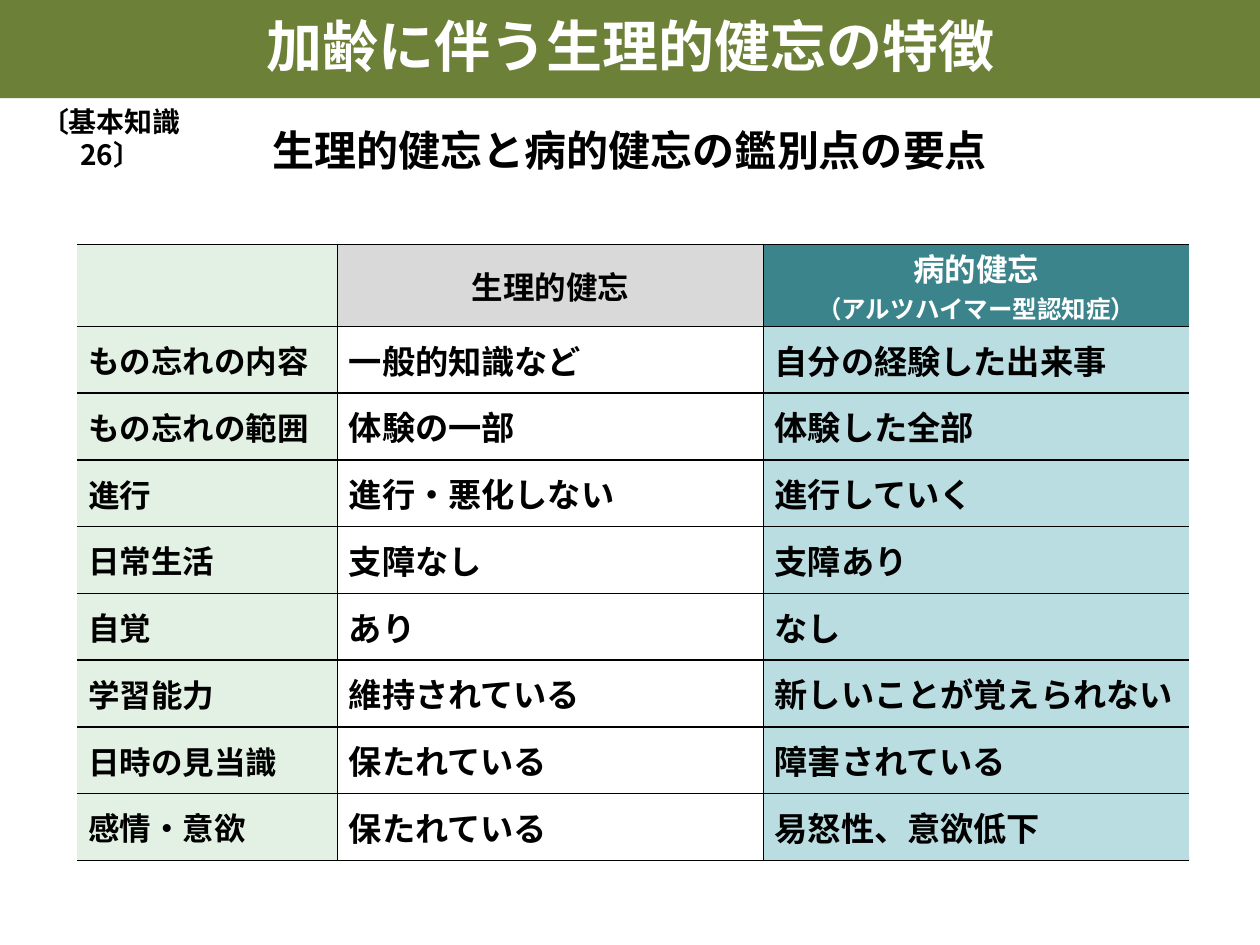
import pptx
import pptx.util
import pptx.dml.color
import pptx.enum.shapes
import pptx.enum.text
import pptx.oxml.ns
import lxml.etree

Inches = pptx.util.Inches
Pt = pptx.util.Pt
ALIGN = pptx.enum.text.PP_ALIGN
MIDDLE = pptx.enum.text.MSO_ANCHOR.MIDDLE
qn = pptx.oxml.ns.qn

FONT = "Noto Sans CJK JP"
COLORS = {
    "band": "6D8038",
    "white": "FFFFFF",
    "black": "000000",
    "label": "E3F1E4",
    "normal": "D9D9D9",
    "disease": "3C848C",
    "disease_body": "BADDE1",
}

ROWS = [
    ("もの忘れの内容", "一般的知識など", "自分の経験した出来事"),
    ("もの忘れの範囲", "体験の一部", "体験した全部"),
    ("進行", "進行・悪化しない", "進行していく"),
    ("日常生活", "支障なし", "支障あり"),
    ("自覚", "あり", "なし"),
    ("学習能力", "維持されている", "新しいことが覚えられない"),
    ("日時の見当識", "保たれている", "障害されている"),
    ("感情・意欲", "保たれている", "易怒性、意欲低下"),
]


def rgb(name):
    return pptx.dml.color.RGBColor.from_string(COLORS[name])


def add_text(p, text, size=18, color="black", align=ALIGN.LEFT):
    """Add one bold run to a paragraph."""
    p.alignment = align
    r = p.add_run()
    r.text = text
    r.font.size = Pt(size)
    r.font.bold = True
    r.font.name = FONT
    r.font.color.rgb = rgb(color)
    ea = lxml.etree.SubElement(r.font._element, qn("a:ea"))
    ea.set("typeface", FONT)


class SlideBuilder:
    def __init__(self, slide):
        self.s = slide

    def band(self, x, y, w, h, color):
        sp = self.s.shapes.add_shape(
            pptx.enum.shapes.MSO_SHAPE.RECTANGLE,
            Inches(x), Inches(y), Inches(w), Inches(h))
        sp.shadow.inherit = False
        sp.fill.solid()
        sp.fill.fore_color.rgb = rgb(color)
        sp.line.fill.background()

    def text(self, x, y, w, h, text, wrap=False, anchor=MIDDLE, **style):
        sp = self.s.shapes.add_textbox(Inches(x), Inches(y), Inches(w), Inches(h))
        tf = sp.text_frame
        tf.word_wrap = wrap
        tf.vertical_anchor = anchor
        add_text(tf.paragraphs[0], text, align=ALIGN.CENTER, **style)

    def table(self, x, y, widths, heights):
        frame = self.s.shapes.add_table(
            len(heights), len(widths), Inches(x), Inches(y),
            Inches(sum(widths)), Inches(sum(heights)))
        table = frame.table
        table.first_row = False
        table.horz_banding = False
        for col, width in zip(table.columns, widths):
            col.width = Inches(width)
        for row, height in zip(table.rows, heights):
            row.height = Inches(height)
        return table

    def cell(self, cell, lines, fill=None, sides="LRTB"):
        """Fill a cell; lines is a list of (text, format) pairs."""
        cell.vertical_anchor = MIDDLE
        cell.margin_left = cell.margin_right = Inches(0.09)
        # Two lines need the full height of the row
        cell.margin_top = cell.margin_bottom = Inches(0 if len(lines) > 1 else 0.05)
        tf = cell.text_frame
        for i, (text, style) in enumerate(lines):
            p = tf.add_paragraph() if i else tf.paragraphs[0]
            add_text(p, text, **style)
        self.borders(cell, sides)
        if fill:
            cell.fill.solid()
            cell.fill.fore_color.rgb = rgb(fill)
        else:
            cell.fill.background()

    def borders(self, cell, sides):
        tc_pr = cell._tc.get_or_add_tcPr()
        for side in "LRTB":
            ln = lxml.etree.SubElement(tc_pr, qn("a:ln" + side))
            if side in sides:
                ln.set("w", str(Pt(1)))
                solid = lxml.etree.SubElement(ln, qn("a:solidFill"))
                clr = lxml.etree.SubElement(solid, qn("a:srgbClr"))
                clr.set("val", COLORS["black"])
            else:
                lxml.etree.SubElement(ln, qn("a:noFill"))


def main():
    prs = pptx.Presentation()
    prs.slide_width, prs.slide_height = Inches(10), Inches(7.5)
    b = SlideBuilder(prs.slides.add_slide(prs.slide_layouts[6]))

    # Title band and headings
    b.band(0, 0, 10, 0.78, "band")
    b.text(0.23, 0.07, 9.56, 0.57, "加齢に伴う生理的健忘の特徴", size=32, color="white")
    b.text(0.22, 0.9, 9.56, 0.57, "生理的健忘と病的健忘の鑑別点の要点", size=24)
    b.text(0, 0.78, 1.76, 0.37, "〔基本知識 26〕", wrap=True,
           anchor=pptx.enum.text.MSO_ANCHOR.TOP, size=16)

    # Comparison table: header row
    table = b.table(0.61, 1.94, [2.07, 3.38, 3.38], [0.65] + [0.53] * len(ROWS))
    sides = ("RTB", "LRTB", "LTB")
    center = {"align": ALIGN.CENTER}
    header = [
        [],
        [("生理的健忘", center)],
        [("病的健忘", {"color": "white", **center}),
         ("（アルツハイマー型認知症）", {"size": 14, "color": "white", **center})],
    ]
    for c, fill in enumerate(("label", "normal", "disease")):
        b.cell(table.cell(0, c), header[c], fill, sides[c])

    # Comparison table: body rows
    body = ((18, "label"), (19, None), (19, "disease_body"))
    for r, row in enumerate(ROWS, 1):
        for c, (size, fill) in enumerate(body):
            b.cell(table.cell(r, c), [(row[c], {"size": size})], fill, sides[c])

    prs.save("out.pptx")


if __name__ == "__main__":
    main()
